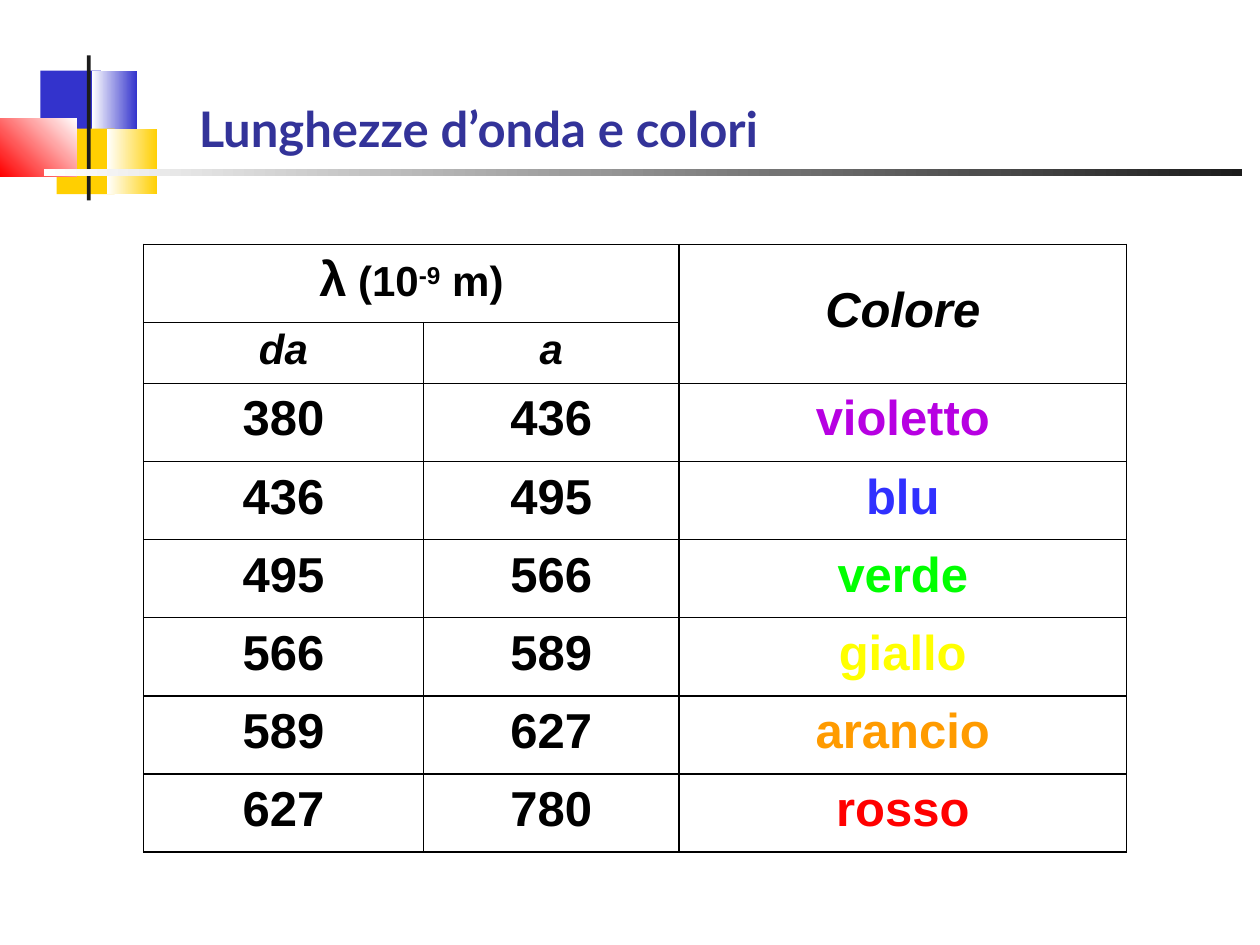
from lxml import etree
from pptx import Presentation
from pptx import util as u
from pptx.dml.color import RGBColor
from pptx.enum import shapes, text
from pptx.oxml import ns

BLUE = RGBColor(0x33, 0x33, 0xCC)
GOLD = RGBColor(0xFF, 0xCF, 0x01)
RED = RGBColor(0xFF, 0x00, 0x00)
INK = RGBColor(0x1C, 0x1C, 0x1C)
WHITE = RGBColor(0xFF, 0xFF, 0xFF)
BLACK = RGBColor(0x00, 0x00, 0x00)
NAVY = RGBColor(0x33, 0x33, 0x99)
VIOLET = RGBColor(0xB7, 0x00, 0xE2)
BRIGHT_BLUE = RGBColor(0x30, 0x30, 0xFF)
GREEN = RGBColor(0x00, 0xFF, 0x00)
YELLOW = RGBColor(0xFF, 0xFF, 0x00)
ORANGE = RGBColor(0xFF, 0x9B, 0x00)

deck = Presentation()
deck.slide_width, deck.slide_height = u.Inches(10), u.Inches(7.5)
page = deck.slides.add_slide(deck.slide_layouts[6])
COLUMN = deck.slide_width / 100
ROW = deck.slide_height / 75


def place(left, top, width, height):
    """Turn grid columns and rows into slide lengths."""
    return [round(n * step) for n, step in
            zip((left, top, width, height), (COLUMN, ROW, COLUMN, ROW))]


def add_span(para, words, color=BLACK, **formats):
    span = para.add_run()
    span.text = words
    for name, value in {"name": "Arial", "size": u.Pt(28), "bold": True, **formats}.items():
        setattr(span.font, name, value)
    span.font.color.rgb = color
    return span


# Corner ornament: place on the grid, colours from start to end, angle
ornament = [
    ((3.2, 5.6, 4.8, 5.2), [BLUE], None),
    ((7.3, 5.6, 3.6, 5.2), [BLUE, WHITE], 180),
    ((4.5, 10.2, 4.6, 5.2), [GOLD], None),
    ((8.5, 10.2, 4, 5.2), [GOLD, WHITE], 180),
    ((0, 9.4, 6.1, 4.6), [WHITE, RED], 225),
    ((6.9, 4.4, 0.3, 11.5), [INK], None),
    ((3.5, 13.4, 95.1, 0.6), [INK, WHITE], 180),
]
for spot, colors, angle in ornament:
    block = page.shapes.add_shape(shapes.MSO_SHAPE.RECTANGLE, *place(*spot))
    block.shadow.inherit = False
    block.line.fill.background()
    if angle is None:
        block.fill.solid()
        block.fill.fore_color.rgb = colors[0]
    else:
        block.fill.gradient()
        block.fill.gradient_angle = angle
        for stop, color in zip(block.fill.gradient_stops, colors):
            stop.color.rgb = color

# Title
title = page.shapes.add_textbox(*place(14.8, 2.4, 85.2, 10.6)).text_frame
title.word_wrap = True
title.vertical_anchor = text.MSO_ANCHOR.BOTTOM
title.paragraphs[0].line_spacing = 1.04
add_span(title.paragraphs[0], "Lunghezze d’onda e colori", NAVY, name="Lato")

# Table: each band of the spectrum starts where the previous one ends
limits = [380, 436, 495, 566, 589, 627, 780]
bands = [("violetto", VIOLET), ("blu", BRIGHT_BLUE), ("verde", GREEN),
         ("giallo", YELLOW), ("arancio", ORANGE), ("rosso", RED)]
widths = [22.2, 20.3, 35.5]
heights = [6.2, 4.8] + [6.2] * len(bands)

table = page.shapes.add_table(
    len(heights), len(widths),
    *place(11.4, 19.4, sum(widths), sum(heights))).table
table.first_row = table.horz_banding = False
for column, width in zip(table.columns, widths):
    column.width = round(width * COLUMN)
for row, height in zip(table.rows, heights):
    row.height = round(height * ROW)

for cell in table.iter_cells():
    cell.vertical_anchor = text.MSO_ANCHOR.MIDDLE
    para = cell.text_frame.paragraphs[0]
    para.alignment = text.PP_ALIGN.CENTER
    para.line_spacing = 0.82
    properties = cell._tc.get_or_add_tcPr()
    for side in ("lnL", "lnR", "lnT", "lnB"):
        border = etree.SubElement(properties, ns.qn(f"a:{side}"), w=str(u.Pt(1)))
        paint = etree.SubElement(border, ns.qn("a:solidFill"))
        etree.SubElement(paint, ns.qn("a:srgbClr"), val=str(BLACK))
    cell.fill.background()

table.cell(0, 0).merge(table.cell(0, 1))
table.cell(0, 2).merge(table.cell(1, 2))

wavelength = table.cell(0, 0).text_frame.paragraphs[0]
add_span(wavelength, "λ")
add_span(wavelength, " (10", size=u.Pt(24))
exponent = add_span(wavelength, "-9", size=u.Pt(24))
exponent.font._element.set("baseline", "30000")
add_span(wavelength, " m)", size=u.Pt(24))

for row, column, words, size in [(0, 2, "Colore", 28), (1, 0, "da", 24), (1, 1, "a", 24)]:
    add_span(table.cell(row, column).text_frame.paragraphs[0], words,
             size=u.Pt(size), italic=True)

for row, (start, end, (name, color)) in enumerate(zip(limits, limits[1:], bands), 2):
    entries = [(str(start), BLACK), (str(end), BLACK), (name, color)]
    for column, (words, ink) in enumerate(entries):
        add_span(table.cell(row, column).text_frame.paragraphs[0], words, ink)

deck.save("out.pptx")
